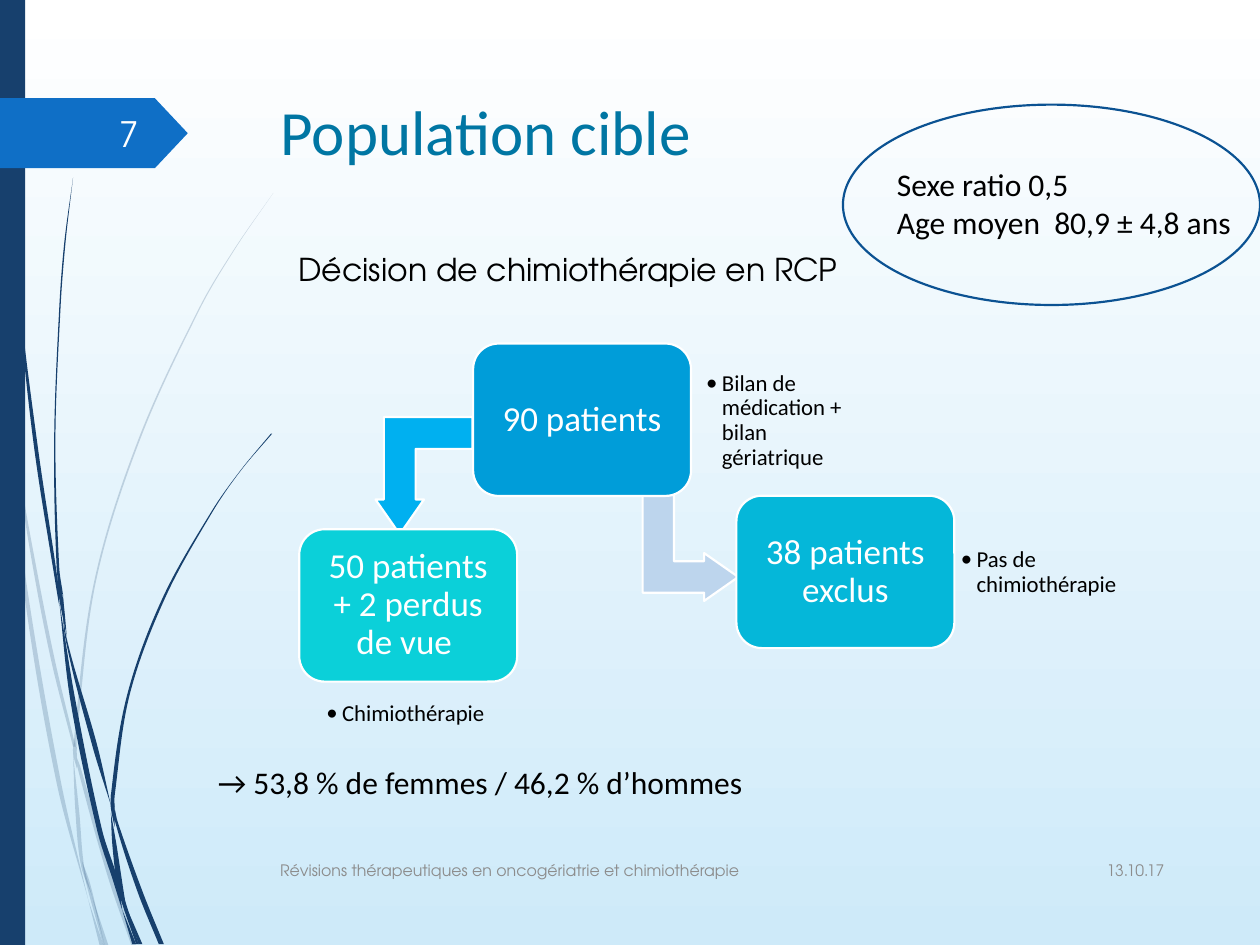
from math import dist
from pptx import Presentation
from pptx.dml.color import RGBColor
from pptx.enum.shapes import MSO_SHAPE
from pptx.enum.text import MSO_ANCHOR, PP_ALIGN
from pptx.oxml import parse_xml
from pptx.oxml.ns import nsdecls
from pptx.util import Inches, Pt

RECT, FLAG, OVAL = MSO_SHAPE.RECTANGLE, MSO_SHAPE.PENTAGON, MSO_SHAPE.OVAL
ROUND, BENT = MSO_SHAPE.ROUNDED_RECTANGLE, MSO_SHAPE.BENT_UP_ARROW
TOP, MID = MSO_ANCHOR.TOP, MSO_ANCHOR.MIDDLE
LEFT, MIDST, RIGHT = PP_ALIGN.LEFT, PP_ALIGN.CENTER, PP_ALIGN.RIGHT
WIDE, HIGH = Inches(10), Inches(7.5)
SANS, GEO = "Calibri", "TeX Gyre Adventor"
HUES = {
    "white": "FFFFFF", "sky": "CEEAF9", "navy": "17406D", "flag": "0F6FC6",
    "title": "0076A3", "black": "000000", "grey": "8C8C8C", "page": "FEFFFF",
    "start": "009DD9", "out": "05B7D9", "kept": "0BD0D9",
    "pale": "BDD5ED", "bright": "00B0F0", "ring": "0B5292",
}
PALE = [
    [(0, 38.7, 0.05), (0.4, 42.5, 0.1), (0.75, 46.7, 0)],
    [(1, 46, 0), (2.45, 57.8, 0.12), (4.15, 69.5, 0.15), (5.9, 79, 0.1)],
    [(6.1, 80.2, 0), (6.25, 81.1, 0.12), (8.65, 92.4, 0.18), (10.6, 100, 0.18)],
    [(7.3, 94.8, 0), (8.45, 100, 0.15)],
    [(0.75, 46.7, 0), (2.05, 62.6, 0.15), (4.65, 82.7, 0.18), (7, 95.2, 0)],
    [(5.8, 79.9, 0), (6.15, 86.1, 0.15), (6.55, 91.6, 0.12), (7.3, 94.8, 0)],
    [(21.7, 20.4, 0), (18.65, 26.3, 0.03), (15.85, 32.6, 0.05), (11.05, 46.5, 0.07),
     (7.55, 61.5, 0.07), (6, 77.9, 0.1), (6.1, 79.5, 0)],
    [(7, 95.2, 0), (8.05, 100, 0.15)],
    [(5.9, 78.1, 0), (5.95, 79.7, 0.15), (6.1, 81.3, 0)],
    [(6.5, 91.1, 0), (7, 93.5, 0.15), (8.25, 100, 0.05)],
]
DARK = [
    [(0.25, 0, 0.05), (0.4, 6.4, 0.05), (0.55, 14.6, 0.05), (1.45, 31, 0.05),
     (2.85, 47.3, 0.15), (4.55, 62.1, 0.1), (4.7, 64.1, 0)],
    [(5, 62.9, 0), (5.2, 67.3, 0.05), (7.5, 78.8, 0.2), (8.8, 85.2, 0)],
    [(9.1, 85.5, 0), (9.25, 87, 0.1), (11.1, 94.3, 0.2), (12.8, 99.9, 0.2)],
    [(4.7, 63.6, 0), (5.8, 74.2, 0.2), (7.9, 87.8, 0.2), (9.2, 93.3, 0.2), (9.7, 96.3, 0)],
    [(5.8, 18.8, 0), (5.15, 25.7, 0.05), (4.75, 32.7, 0.05), (4.35, 46.5, 0.05),
     (4.6, 60, 0.1), (4.95, 62.9, 0.05)],
    [(10, 95.9, 0), (11.15, 99.9, 0.15)],
    [(4.5, 59.9, 0), (4.85, 63.3, 0.15), (5.3, 67.3, 0)],
    [(21.55, 45.9, 0.05), (19.1, 49.8, 0.02), (16.85, 54.1, 0.05), (13, 63.3, 0.1),
     (10.2, 73.5, 0.1), (8.95, 84.2, 0.15), (9.1, 85.5, 0)],
    [(9.7, 96.3, 0), (10.65, 99.9, 0.15)],
    [(8.8, 86, 0), (9.1, 89.6, 0.17), (9.55, 93.8, 0.2), (10, 95.9, 0)],
    [(8.8, 84.1, 0), (8.95, 85.5, 0.15), (9.1, 87.5, 0)],
    [(9.1, 92.1, 0), (9.7, 95, 0.15), (10.9, 99.9, 0.1)],
]


def hue(name):
    """Return the colour of that name."""
    return RGBColor.from_string(HUES[name])


def place(box):
    """Turn percent shares of the slide into lengths."""
    return [int(part * side / 100) for part, side in zip(box, (WIDE, HIGH) * 2)]


def paint(shape, fill=None, edge=None):
    """Set fill and line and drop the shadow."""
    shape.shadow.inherit = False
    if fill:
        shape.fill.solid()
        shape.fill.fore_color.rgb = hue(fill)
    else:
        shape.fill.background()
    if edge:
        shape.line.color.rgb = hue(edge)
        shape.line.width = Pt(1.25)
    else:
        shape.line.fill.background()


def block(slide, kind, box, fill=None, edge=None, turn=0, tune=()):
    """Add a preset shape."""
    shape = slide.shapes.add_shape(kind, *place(box))
    paint(shape, fill, edge)
    shape.rotation = turn
    for i, size in enumerate(tune):
        shape.adjustments[i] = size


    return shape


def write(shape, lines, size, tint, font=SANS, align=LEFT, anchor=TOP, pad=None, space=None):
    """Fill a shape with one run for each line."""
    frame = shape.text_frame
    frame.word_wrap = True
    frame.vertical_anchor = anchor
    if pad is not None:
        frame.margin_left = frame.margin_right = Inches(pad)
        frame.margin_top = frame.margin_bottom = Inches(pad)
    for i, line in enumerate(lines):
        para = frame.add_paragraph() if i else frame.paragraphs[0]
        para.alignment = align
        if space:
            para.line_spacing = space
        run = para.add_run()
        run.text = line
        run.font.size, run.font.name = Pt(size), font
        run.font.color.rgb = hue(tint)


def label(slide, box, lines, size, tint="black", **style):
    """Add a text box."""
    shape = slide.shapes.add_textbox(*place(box))
    write(shape, lines, size, tint, **style)
    return shape


def note(slide, box, text, pad):
    """Add a bulleted remark."""
    shape = label(slide, box, [text], 13, anchor=MID, pad=pad, space=0.9)
    props = shape.text_frame.paragraphs[0]._p.get_or_add_pPr()
    props.set("marL", "114300")
    props.set("indent", "-114300")
    props.append(parse_xml(f'<a:buFont {nsdecls("a")} typeface="{SANS}"/>'))
    props.append(parse_xml(f'<a:buChar {nsdecls("a")} char="•"/>'))


def step(slide, spot, text, fill):
    """Add a rounded box of the flow."""
    shape = block(slide, ROUND, (*spot, 17.3, 16.13), fill, "white", tune=[0.167])
    write(shape, [text], 20, "white", align=MIDST, anchor=MID, pad=0.14, space=0.9)


def bend(dots):
    """Return the control points of a smooth curve for each gap between dots."""
    ends = [dots[0], *dots, dots[-1]]
    ways = [((c[0] - a[0]) / dist(a, c), (c[1] - a[1]) / dist(a, c))
            for a, c in zip(ends, ends[2:])]
    for p, q, u, v in zip(dots, dots[1:], ways, ways[1:]):
        arm = dist(p, q) / 3
        yield ((p[0] + u[0] * arm, p[1] + u[1] * arm),
               (q[0] - v[0] * arm, q[1] - v[1] * arm), q)


def stem(slide, knots, alpha=None):
    """Add a curved blade from knots of x, y and half width."""
    near = [place((x - w, y)) for x, y, w in knots]
    far = [place((x + w, y)) for x, y, w in knots][::-1]
    pen = slide.shapes.build_freeform(*near[0])
    pen.add_line_segments(near[1:] + far, close=True)
    shape = pen.convert_to_shape()
    paint(shape, "navy")
    lines = shape._element.xpath(".//a:lnTo")
    del lines[len(near) - 1]
    for line, trio in zip(lines, [*bend(near), *bend(far)]):
        pts = "".join(f'<a:pt x="{int(x - shape.left)}" y="{int(y - shape.top)}"/>'
                      for x, y in trio)
        line.getparent().replace(line, parse_xml(
            f'<a:cubicBezTo {nsdecls("a")}>{pts}</a:cubicBezTo>'))
    if alpha:
        tone = shape.fill._xPr.solidFill[0]
        tone.append(parse_xml(f'<a:alpha {nsdecls("a")} val="{alpha * 1000}"/>'))


def frame(slide):
    """Add the backdrop, the blades and the page flag."""
    fill = slide.background.fill
    fill.gradient()
    fill.gradient_angle = 270
    for stop, name, spot in zip(fill.gradient_stops, ("white", "sky"), (0, 1)):
        stop.color.rgb, stop.position = hue(name), spot
    for group, alpha in ((PALE, 20), (DARK, None)):
        for knots in group:
            stem(slide, knots, alpha)
    block(slide, RECT, (0, 0, 2, 100), "navy")
    block(slide, FLAG, (0, 10.4, 14.9, 7.4), "flag", tune=[0.47])
    foot = {"font": GEO, "anchor": MID}
    label(slide, (85, 89.47, 8.4, 5.33), ["13.10.17"], 9, "grey", align=RIGHT, **foot)
    label(slide, (21.25, 89.47, 62.5, 5.33),
          ["Révisions thérapeutiques en oncogériatrie et chimiothérapie"], 9, "grey", **foot)
    label(slide, (5.6, 11.47, 6.4, 5.33), ["7"], 20, "page", align=RIGHT, **foot)


def flow(slide):
    """Add the patient flow with its remarks."""
    tune = [0.328, 0.25, 0.358]
    block(slide, BENT, (50.6, 52.93, 8.4, 10.13), "pale", "white", 90, tune)
    step(slide, (37.55, 36.35), "90 patients", "start")
    note(slide, (55.35, 38, 12.6, 13.07), "Bilan de médication + bilan gériatrique", 0.07)
    block(slide, BENT, (29.8, 44.13, 7.7, 12.4), "bright", "white", 180, tune)
    step(slide, (58.45, 52.45), "38 patients exclus", "out")
    note(slide, (75.55, 54.05, 14.8, 13.07), "Pas de chimiothérapie", 0.07)
    step(slide, (23.75, 56), "50 patients + 2 perdus de vue ", "kept")
    note(slide, (25.4, 69.07, 15.6, 13.07), "Chimiothérapie", 0.05)


def main():
    """Build the slide and save it."""
    deck = Presentation()
    deck.slide_width, deck.slide_height = WIDE, HIGH
    slide = deck.slides.add_slide(deck.slide_layouts[6])
    frame(slide)
    label(slide, (21.3, 9.15, 36, 8.8), ["Population cible"], 36, "title")
    flow(slide)
    label(slide, (70.2, 16.8, 29.8, 13.47), ["Sexe ratio 0,5", "Age moyen  80,9 ± 4,8 ans"], 18)
    label(slide, (16.3, 80.1, 53.9, 5.33), ["→ 53,8 % de femmes / 46,2 % d’hommes"], 18)
    block(slide, OVAL, (66.9, 11.07, 33.1, 21.2), edge="ring")
    label(slide, (22.7, 25.8, 47.5, 5.33), ["Décision de chimiothérapie en RCP"], 18, font=GEO)
    deck.save("out.pptx")


if __name__ == "__main__":
    main()
